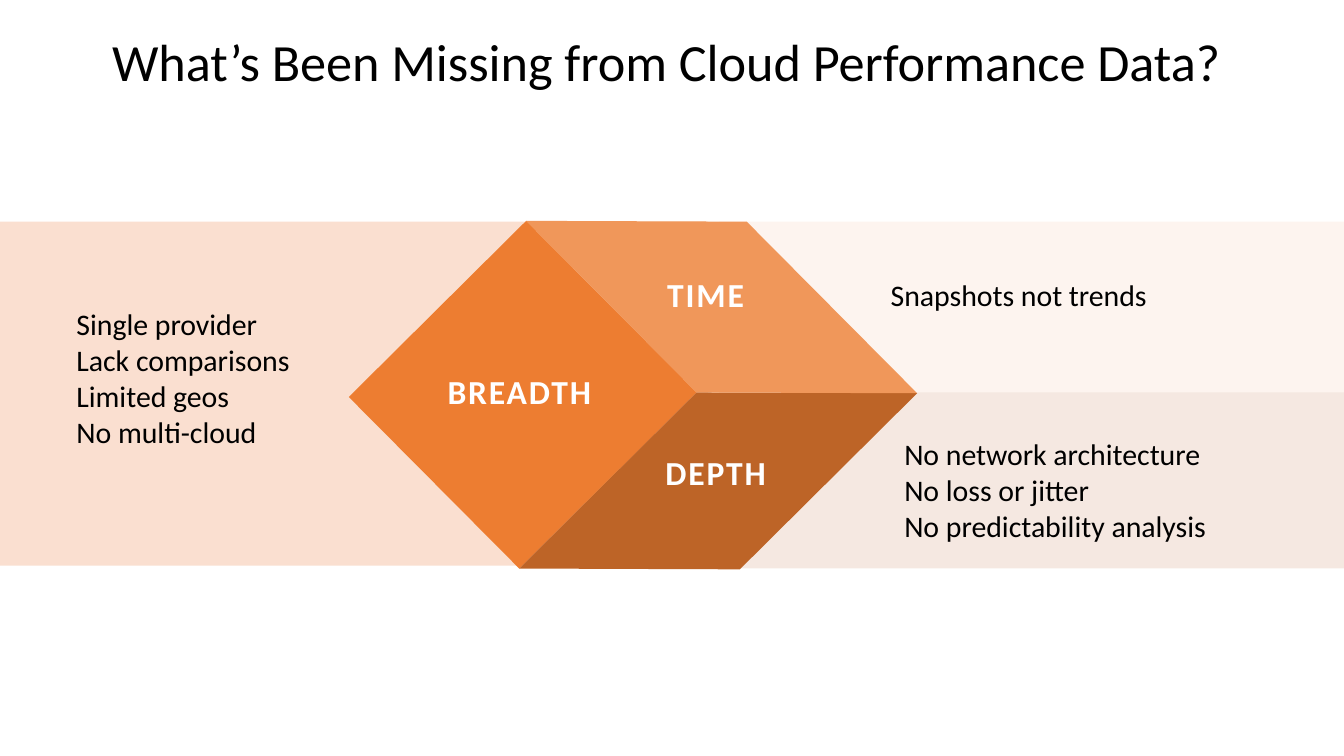
from pptx import Presentation
from pptx.dml.color import RGBColor
from pptx.enum.shapes import MSO_SHAPE
from pptx.enum.text import MSO_ANCHOR, PP_ALIGN
from pptx.oxml.ns import qn
from pptx.util import Inches, Pt
from lxml.etree import SubElement

W = 10
H = W * 9 / 16
FONT = "Calibri"
COLORS = {
    "text": "000000",
    "label": "FFFFFF",
    "cube": "ED7D31",
    "time": "EF9966",
    "depth": "BE6837",
    "breadth": "EC8145",
}

# Rows and columns where the bands meet
TOP, MIDDLE, BOTTOM = 1.65, 2.92, 4.23
LEFT_END, RIGHT_START = 5.27, 5.35


def rgb(name):
    return RGBColor.from_string(COLORS[name])


def add_filled(s, kind, box, color, opacity=100):
    """Add a borderless shape; opacity is in percent."""
    sp = s.shapes.add_shape(kind, *map(Inches, box))
    sp.shadow.inherit = False
    sp.fill.solid()
    sp.fill.fore_color.rgb = rgb(color)
    sp.line.fill.background()
    if opacity < 100:
        clr = sp._element.spPr.find(qn("a:solidFill"))[0]
        SubElement(clr, qn("a:alpha"), val=str(opacity * 1000))
    return sp


def add_text(s, box, lines, size=16, color="text", align=PP_ALIGN.LEFT,
             anchor=MSO_ANCHOR.MIDDLE, wrap=True, bold=False):
    """Add one paragraph per line; a vertical tab breaks within a paragraph."""
    sp = s.shapes.add_textbox(*map(Inches, box))
    tf = sp.text_frame
    tf.word_wrap = wrap
    tf.vertical_anchor = anchor
    tf.text = "\n".join(lines)
    for p in tf.paragraphs:
        p.alignment = align
        p.font.name = FONT
        p.font.size = Pt(size)
        p.font.bold = bold
        p.font.color.rgb = rgb(color)
    return tf


def add_title(s, text):
    tf = add_text(s, (0, 0.22, W, 0.62), [text], size=28,
                  align=PP_ALIGN.CENTER, anchor=MSO_ANCHOR.TOP)
    p = tf.paragraphs[0]
    p.line_spacing = 0.9
    p.space_before = Pt(10)


def add_cube(s):
    sp = add_filled(s, MSO_SHAPE.CUBE, (3.23, 1.43, 2.96, 3.02), "cube")
    sp.adjustments[0] = 0.392
    sp.rotation = 45.2


def add_face_label(s, box, text):
    tf = add_text(s, box, [text], size=18, color="label",
                  align=PP_ALIGN.CENTER, wrap=False, bold=True)
    r = tf.paragraphs[0].runs[0]
    r.font._element.set("spc", "100")


def main():
    prs = Presentation()
    prs.slide_width, prs.slide_height = Inches(W), Inches(H)
    s = prs.slides.add_slide(prs.slide_layouts[6])

    add_title(s, "What’s Been Missing from Cloud Performance Data? ")

    right_width = W - RIGHT_START
    bands = [
        ((RIGHT_START, TOP, right_width, MIDDLE - TOP), "time", 10),
        ((RIGHT_START, MIDDLE, right_width, BOTTOM - MIDDLE), "depth", 15),
        ((0, TOP, LEFT_END, 2.56), "breadth", 25),
    ]
    for box, color, opacity in bands:
        add_filled(s, MSO_SHAPE.RECTANGLE, box, color, opacity)

    add_text(s, (6.63, 3.19, 3.22, 0.91),
             ["No network architecture", "No loss or jitter",
              "No predictability analysis"])
    add_text(s, (0.47, 2.22, 2.49, 1.18),
             ["Single provider", "Lack comparisons\vLimited geos",
              "No multi-cloud"])
    add_text(s, (6.34, 2.01, 2.48, 0.37), ["Snapshots not trends"],
             align=PP_ALIGN.CENTER)

    add_cube(s)
    add_face_label(s, (4.76, 3.31, 1.13, 0.4), "DEPTH")
    add_face_label(s, (4.81, 1.99, 0.88, 0.4), "TIME")
    add_face_label(s, (3.1, 2.71, 1.53, 0.4), "BREADTH")

    prs.save("out.pptx")


if __name__ == "__main__":
    main()
